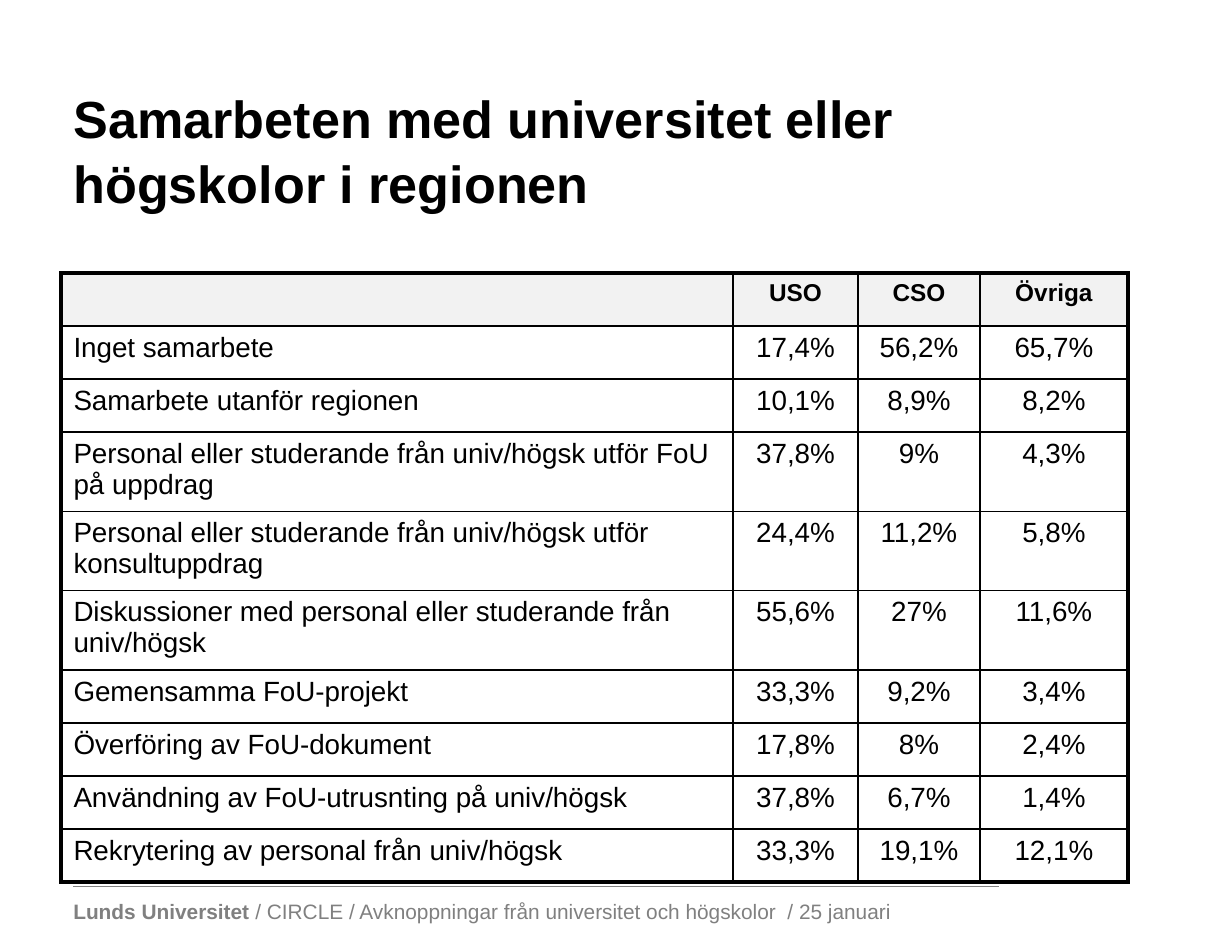
"""Build a slide with a table of firms' collaboration with regional universities."""
import pptx
import pptx.dml.color
import pptx.enum.shapes
import pptx.enum.text
import pptx.oxml
import pptx.oxml.ns
import pptx.util

PX = 7303
THEME = {
    "font": "Arial",
    "ink": "000000",
    "muted": "808080",
    "header_fill": "F2F2F2",
    "title_pt": 30,
    "header_pt": 14,
    "body_pt": 16,
    "footer_pt": 12,
    "outer_pt": 2.25,
    "inner_pt": 1,
    "rule_pt": 0.5,
}


def format_font(font, size, color, bold):
    values = {"name": THEME["font"], "size": pptx.util.Pt(size), "bold": bold}
    for key, value in values.items():
        setattr(font, key, value)
    font.color.rgb = pptx.dml.color.RGBColor.from_string(color)


def add_border(cell, side, points):
    cell.fill.background()
    properties = cell.fill._xPr
    border = pptx.oxml.parse_xml(
        f'<a:ln{side} {pptx.oxml.ns.nsdecls("a")} w="{int(pptx.util.Pt(points))}">'
        f'<a:solidFill><a:srgbClr val="{THEME["ink"]}"/></a:solidFill></a:ln{side}>'
    )
    properties.insert("LRTB".index(side), border)


deck = pptx.Presentation()
deck.slide_width, deck.slide_height = 1232 * PX, 936 * PX
slide = deck.slides.add_slide(deck.slide_layouts[5])

title = slide.shapes.title
for key, value in {"left": 61, "top": 70, "width": 1109, "height": 157}.items():
    setattr(title, key, value * PX)
title_frame = title.text_frame
title_frame.text = "Samarbeten med universitet eller högskolor i regionen"
title_frame.auto_size = pptx.enum.text.MSO_AUTO_SIZE.NONE
title_frame.vertical_anchor = pptx.enum.text.MSO_ANCHOR.MIDDLE
heading = title_frame.paragraphs[0]
heading.alignment = pptx.enum.text.PP_ALIGN.LEFT
heading.line_spacing = 1.05
format_font(heading.font, THEME["title_pt"], THEME["ink"], True)

footer = slide.shapes.add_textbox(61 * PX, 893 * PX, 844 * PX, 38 * PX)
footer.text_frame.word_wrap = False
footer_line = footer.text_frame.paragraphs[0]
for words, bold in (
    ("Lunds Universitet", True),
    (" / CIRCLE / Avknoppningar från universitet och högskolor  / 25 januari", False),
):
    footer_part = footer_line.add_run()
    footer_part.text = words
    format_font(footer_part.font, THEME["footer_pt"], THEME["muted"], bold)

footer_rule = slide.shapes.add_connector(
    pptx.enum.shapes.MSO_CONNECTOR.STRAIGHT, 73 * PX, 886 * PX, 999 * PX, 886 * PX
)
footer_rule.line.color.rgb = pptx.dml.color.RGBColor.from_string(THEME["muted"])
footer_rule.line.width = pptx.util.Pt(THEME["rule_pt"])
footer_rule._element.spPr.append(
    pptx.oxml.parse_xml(f'<a:effectLst {pptx.oxml.ns.nsdecls("a")}/>')
)

SINGLE, DOUBLE = 53, 74
collaborations = [
    (SINGLE, "", "USO", "CSO", "Övriga"),
    (SINGLE, "Inget samarbete", "17,4%", "56,2%", "65,7%"),
    (SINGLE, "Samarbete utanför regionen", "10,1%", "8,9%", "8,2%"),
    (DOUBLE, "Personal eller studerande från univ/högsk utför FoU på uppdrag", "37,8%", "9%", "4,3%"),
    (DOUBLE, "Personal eller studerande från univ/högsk utför konsultuppdrag", "24,4%", "11,2%", "5,8%"),
    (DOUBLE, "Diskussioner med personal eller studerande från univ/högsk", "55,6%", "27%", "11,6%"),
    (SINGLE, "Gemensamma FoU-projekt", "33,3%", "9,2%", "3,4%"),
    (SINGLE, "Överföring av FoU-dokument", "17,8%", "8%", "2,4%"),
    (SINGLE, "Användning av FoU-utrusnting på univ/högsk", "37,8%", "6,7%", "1,4%"),
    (SINGLE, "Rekrytering av personal från univ/högsk", "33,3%", "19,1%", "12,1%"),
]
column_widths = [672, 125, 122, 148]
last_row, last_column = len(collaborations) - 1, len(column_widths) - 1
table = slide.shapes.add_table(
    len(collaborations),
    len(column_widths),
    61 * PX,
    273 * PX,
    sum(column_widths) * PX,
    sum(entry[0] for entry in collaborations) * PX,
).table
for key, value in {"first_row": False, "horz_banding": False}.items():
    setattr(table, key, value)
for column, width in zip(table.columns, column_widths):
    column.width = width * PX

for row, (height, *texts) in enumerate(collaborations):
    table.rows[row].height = height * PX
    is_header = row == 0
    for column, words in enumerate(texts):
        cell = table.cell(row, column)
        cell.text = words
        paragraph = cell.text_frame.paragraphs[0]
        if column:
            paragraph.alignment = pptx.enum.text.PP_ALIGN.CENTER
        size = THEME["header_pt"] if is_header else THEME["body_pt"]
        format_font(paragraph.font, size, THEME["ink"], is_header)
        outer_sides = {
            "L": column == 0,
            "R": column == last_column,
            "T": is_header,
            "B": row == last_row,
        }
        for side, is_outer in outer_sides.items():
            add_border(cell, side, THEME["outer_pt"] if is_outer else THEME["inner_pt"])
        if is_header:
            cell.fill.solid()
            cell.fill.fore_color.rgb = pptx.dml.color.RGBColor.from_string(THEME["header_fill"])

deck.save("out.pptx")
